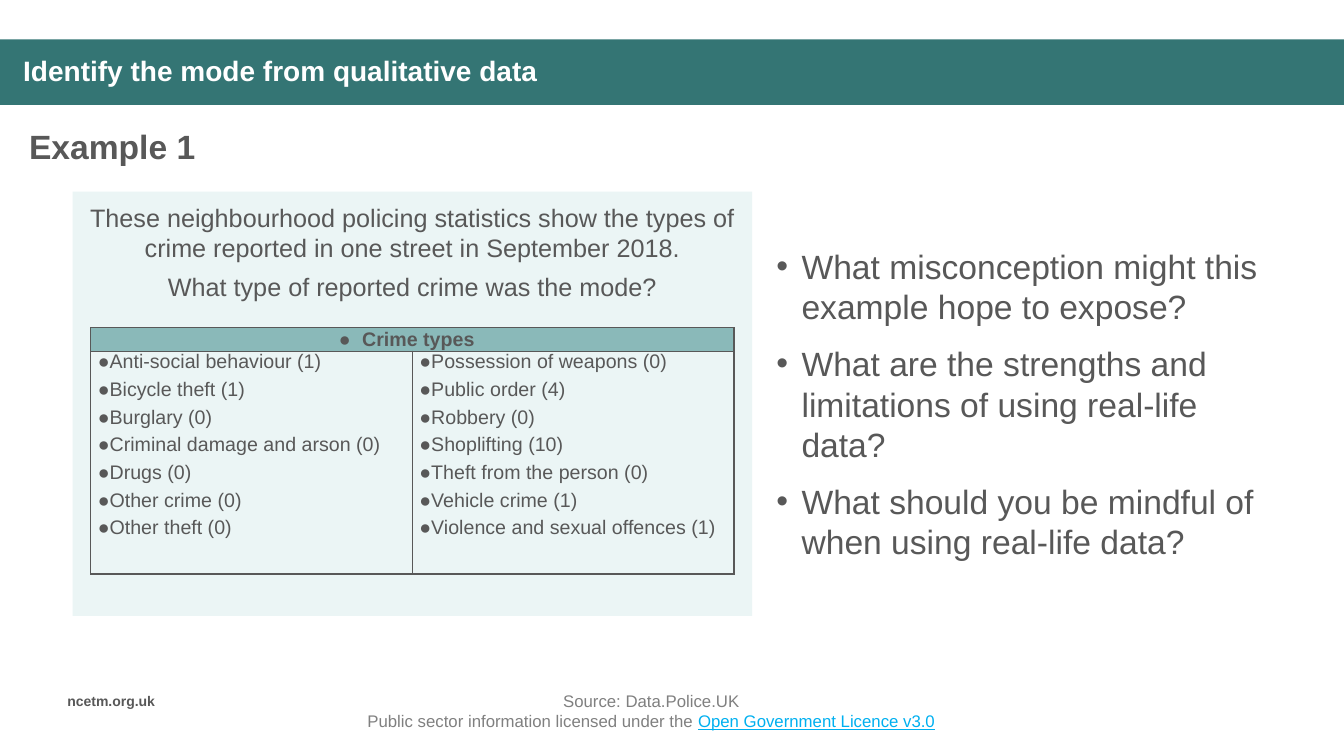
from lxml import etree
from pptx import Presentation
from pptx import util as u
from pptx.dml.color import RGBColor
from pptx.enum import shapes, text
from pptx.oxml import ns

PX = 9144  # EMU in one px, 100 px to the inch
GREY, TEAL, PALE, HEADER = "585858", "347574", "EBF5F5", "8AB9B9"
CENTER = text.PP_ALIGN.CENTER
MIDDLE = text.MSO_ANCHOR.MIDDLE

CRIMES = [
    ["Anti-social behaviour (1)", "Bicycle theft (1)", "Burglary (0)",
     "Criminal damage and arson (0)", "Drugs (0)", "Other crime (0)", "Other theft (0)"],
    ["Possession of weapons (0)", "Public order (4)", "Robbery (0)", "Shoplifting (10)",
     "Theft from the person (0)", "Vehicle crime (1)", "Violence and sexual offences (1)"],
]
QUESTIONS = [
    "What misconception might this example hope to expose?",
    "What are the strengths and limitations of using real-life data?",
    "What should you be mindful of when using real-life data?",
]


def px(value):
    return u.Emu(round(value * PX))


def color(value):
    return RGBColor.from_string(value)


def place(shape, box):
    shape.left, shape.top, shape.width, shape.height = map(px, box)


def style(font, size, fill=GREY, bold=False, underline=False):
    font.name, font.size, font.bold, font.underline = "Arial", u.Pt(size), bold, underline
    font.color.rgb = color(fill)


def add_bullet(paragraph, character, margin, indent):
    properties = paragraph._p.get_or_add_pPr()
    properties.set("marL", str(px(margin)))
    properties.set("indent", str(px(indent)))
    etree.SubElement(properties, ns.qn("a:buFont")).set("typeface", "Arial")
    etree.SubElement(properties, ns.qn("a:buChar")).set("char", character)


def write(frame, lines, size=18, fill=GREY, bold=False, align=text.PP_ALIGN.LEFT,
          anchor=text.MSO_ANCHOR.TOP, after=0, spacing=1.0, bullet=None):
    """Fill a text frame with one paragraph for each line."""
    frame.word_wrap = True
    frame.auto_size = text.MSO_AUTO_SIZE.NONE
    frame.vertical_anchor = anchor
    write_paragraphs(frame, lines, size, fill, bold, align, after, spacing, bullet)


def write_paragraphs(frame, lines, size, fill=GREY, bold=False, align=text.PP_ALIGN.LEFT,
                     after=0, spacing=1.0, bullet=None):
    for index, line in enumerate(lines):
        paragraph = frame.add_paragraph() if index else frame.paragraphs[0]
        paragraph.alignment, paragraph.line_spacing = align, spacing
        paragraph.space_before, paragraph.space_after = u.Pt(0), u.Pt(after)
        if bullet:
            add_bullet(paragraph, *bullet)
        paragraph.text = line
        style(paragraph.font, size, fill, bold)
        for run in paragraph.runs:
            style(run.font, size, fill, bold)


def add_text(slide, box, lines, **options):
    frame = slide.shapes.add_textbox(*map(px, box)).text_frame
    write(frame, lines, **options)
    return frame


def add_panel(slide, box, fill):
    panel = slide.shapes.add_shape(shapes.MSO_SHAPE.RECTANGLE, *map(px, box))
    panel.shadow.inherit = False
    panel.fill.solid()
    panel.fill.fore_color.rgb = color(fill)
    panel.line.fill.background()


def set_borders(cell):
    properties = cell._tc.get_or_add_tcPr()
    for index, side in enumerate(("lnL", "lnR", "lnT", "lnB")):
        line = etree.Element(ns.qn("a:" + side), w=str(u.Pt(1)))
        solid = etree.SubElement(line, ns.qn("a:solidFill"))
        etree.SubElement(solid, ns.qn("a:srgbClr")).set("val", GREY)
        properties.insert(index, line)


def add_header(slide, box):
    left, top, width, height = box
    add_panel(slide, box, TEAL)
    title = slide.shapes.title
    place(title, (left + 13, top + 9, width - 101, height - 18))
    write(title.text_frame, ["Identify the mode from qualitative data"], size=20,
          fill="FFFFFF", bold=True, anchor=MIDDLE, spacing=0.9)
    # Bring the title in front of its band
    slide.shapes._spTree.append(title._element)


def add_crime_table(slide, box):
    left, top, width, height = box
    table = slide.shapes.add_table(2, 2, *map(px, box)).table
    table.first_row = table.horz_banding = False
    table.rows[0].height, table.rows[1].height = px(22), px(height - 22)
    for column in table.columns:
        column.width = px(width / 2)
    for cell in table.iter_cells():
        cell.margin_left = cell.margin_right = px(7)
        cell.margin_top = cell.margin_bottom = 0
        cell.fill.background()
        set_borders(cell)
    heading = table.cell(0, 0)
    heading.merge(table.cell(0, 1))
    heading.fill.solid()
    heading.fill.fore_color.rgb = color(HEADER)
    heading.vertical_anchor = MIDDLE
    write_paragraphs(heading.text_frame, ["Crime types"], 14, bold=True, align=CENTER,
                     after=4, spacing=1.07, bullet=("●", 12, -23))
    for column, crimes in enumerate(CRIMES):
        write_paragraphs(table.cell(1, column).text_frame, crimes, 14, after=4,
                         bullet=("●", 0, 0))


def add_example(slide, box):
    left, top, width, height = box
    add_panel(slide, box, PALE)
    add_text(slide, (left, top + 6, width, 109), [
        "These neighbourhood policing statistics show the types of "
        "crime reported in one street in September 2018.",
        "What type of reported crime was the mode?",
    ], align=CENTER, after=6)
    add_crime_table(slide, (left + 18, top + 135, width - 36, 243))


def add_questions(slide, box):
    body = slide.placeholders[1]
    place(body, box)
    write(body.text_frame, QUESTIONS, size=24, anchor=MIDDLE, after=12,
          bullet=("•", 39, -25))


def add_footer(slide, box):
    left, top, width, height = box
    add_text(slide, (left + 57, top + 2, 121, 27), ["ncetm.org.uk"], size=10, bold=True)
    source = add_text(slide, (left + 264, top, 764, height), [
        "Source: Data.Police.UK\vPublic sector information licensed under the "
    ], size=12, fill="808080", align=CENTER)
    licence = source.paragraphs[0].add_run()
    licence.text = "Open Government Licence v3.0"
    style(licence.font, 12, "00B0F0", underline=True)


def main():
    presentation = Presentation()
    presentation.slide_width, presentation.slide_height = px(1333), px(750)
    slide = presentation.slides.add_slide(presentation.slide_layouts[1])
    add_header(slide, (0, 39, 1333, 65))
    add_text(slide, (19, 120, 666, 50), ["Example 1"], size=24, bold=True)
    add_questions(slide, (746, 190, 535, 421))
    add_example(slide, (72, 190, 674, 421))
    add_footer(slide, (0, 680, 1333, 50))
    presentation.save("out.pptx")


if __name__ == "__main__":
    main()
